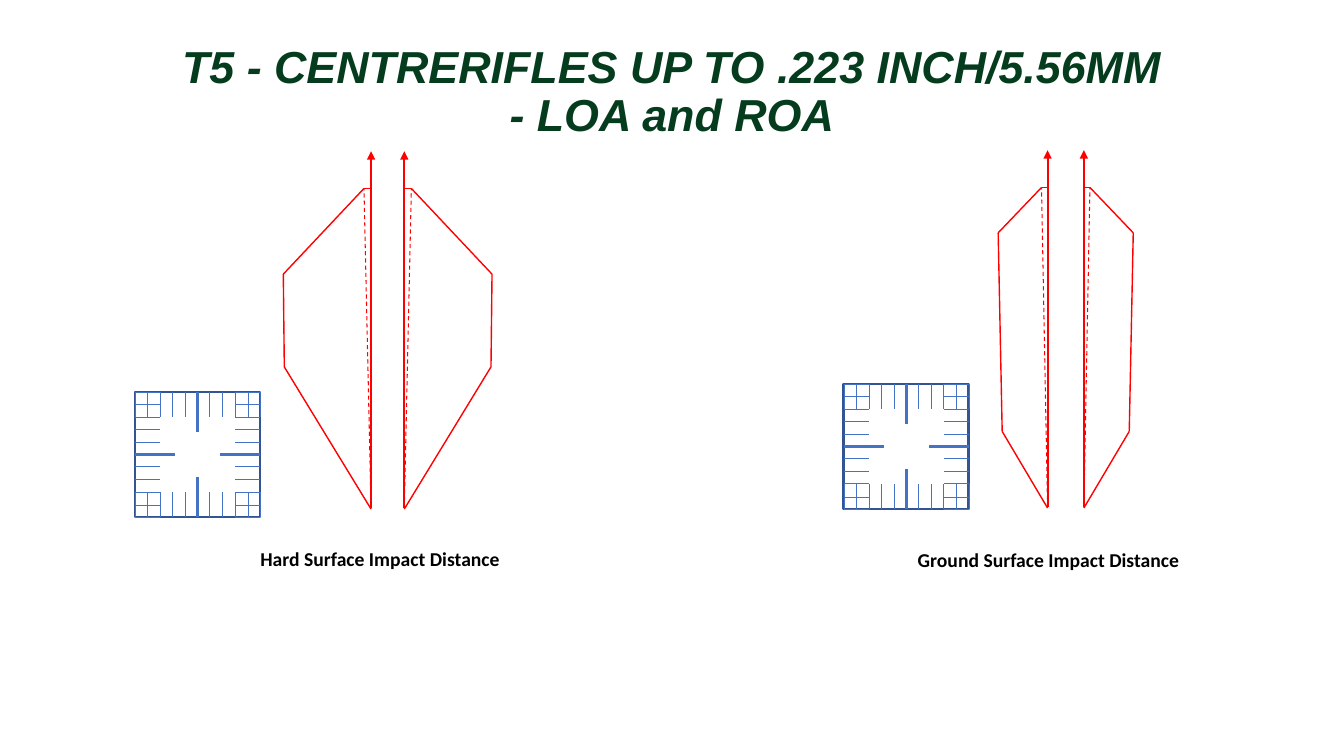
from dataclasses import dataclass

from lxml import etree
from pptx import Presentation
from pptx.dml import color
from pptx.enum import dml, shapes, text
from pptx.oxml import ns
from pptx import util as u

PX = 9144
TICK_COUNT = 10


@dataclass(frozen=True)
class Theme:
    title_color: color.RGBColor = color.RGBColor.from_string("053C1E")
    caption_color: color.RGBColor = color.RGBColor.from_string("000000")
    arc_color: color.RGBColor = color.RGBColor.from_string("FF0000")
    frame_color: color.RGBColor = color.RGBColor.from_string("325491")
    tick_color: color.RGBColor = color.RGBColor.from_string("4472C4")
    title_size: int = 32
    caption_size: int = 14
    title_font: str = "Arial"
    caption_font: str = "Calibri"


@dataclass(frozen=True)
class Diagram:
    caption: str
    caption_at: tuple
    grid_at: tuple
    axes: tuple
    top: int
    lean: int
    shoulder: tuple
    hip: tuple


THEME = Theme()
GRID_SIDE = 124
DIAGRAMS = (
    Diagram("Hard Surface Impact Distance", (188, 538, 378, 34),
            (134, 389), (368, 401), 150, 7, (87, 272), (86, 364)),
    Diagram("Ground Surface Impact Distance", (851, 539, 378, 57),
            (837, 381), (1039, 1075), 149, 6, (49, 231), (45, 428)),
)


def px(*lengths):
    return [u.Emu(round(length) * PX) for length in lengths]


def style_paragraph(para, size, font_name, font_color, italic=False):
    para.alignment = text.PP_ALIGN.CENTER
    para.font.size = u.Pt(size)
    para.font.name = font_name
    para.font.bold = True
    para.font.italic = italic
    para.font.color.rgb = font_color


def add_title(page, lines):
    title = page.shapes.title
    title.left, title.top, title.width, title.height = px(0, 43, 1333, 98)
    frame = title.text_frame
    frame.text = "\n".join(lines)
    frame.word_wrap = True
    frame.auto_size = text.MSO_AUTO_SIZE.NONE
    frame.vertical_anchor = text.MSO_ANCHOR.MIDDLE
    for para in frame.paragraphs:
        style_paragraph(para, THEME.title_size, THEME.title_font,
                        THEME.title_color, italic=True)
        para.line_spacing = 0.9


def add_caption(page, caption, place):
    box = page.shapes.add_textbox(*px(*place))
    box.text_frame.word_wrap = True
    para = box.text_frame.paragraphs[0]
    para.text = caption
    style_paragraph(para, THEME.caption_size, THEME.caption_font,
                    THEME.caption_color)


def add_line(group, start, end, line_color, width, dash=None, arrow=False):
    line = group.shapes.add_connector(
        shapes.MSO_CONNECTOR.STRAIGHT, *px(*start, *end))
    line.line.color.rgb = line_color
    line.line.width = u.Pt(width)
    if dash:
        line.line.dash_style = dash
    if arrow:
        etree.SubElement(line.line._get_or_add_ln(), ns.qn("a:tailEnd"),
                         type="triangle")
    etree.SubElement(line._element.spPr, ns.qn("a:effectLst"))
    return line


def add_grid(group, left, top):
    frame = group.shapes.add_shape(
        shapes.MSO_SHAPE.RECTANGLE, *px(left, top, GRID_SIDE, GRID_SIDE))
    frame.shadow.inherit = False
    frame.fill.background()
    frame.line.color.rgb = THEME.frame_color
    frame.line.width = u.Pt(2)
    right, bottom = left + GRID_SIDE, top + GRID_SIDE
    for index in range(TICK_COUNT + 1):
        offset = GRID_SIDE * index / TICK_COUNT
        middle = index == TICK_COUNT // 2
        length, width = (40, 1.75) if middle else (25, 0.5)
        x, y = left + offset, top + offset
        ticks = (
            ((x, top), (x, top + length)),
            ((left, y), (left + length, y)),
            ((x, bottom), (x, bottom - length)),
            ((right, y), (right - length, y)),
        )
        for site, (start, end) in enumerate(ticks):
            tick = add_line(group, start, end, THEME.tick_color, width)
            if middle:
                tick.begin_connect(frame, site)


def add_arc(group, axis, side, diagram):
    def point(reach, y):
        return axis + side * reach, y

    crown, base = diagram.top + 37, diagram.top + 354
    foot = point(0, base)
    peak = point(diagram.lean, crown)
    shoulder, hip = point(*diagram.shoulder), point(*diagram.hip)
    add_line(group, foot, point(0, diagram.top), THEME.arc_color, 1.5,
             arrow=True)
    add_line(group, foot, peak, THEME.arc_color, 0.75,
             dash=dml.MSO_LINE.DASH)
    outline = (point(0, base + 1), hip, shoulder, peak, point(0, crown))
    for start, end in zip(outline, outline[1:]):
        add_line(group, start, end, THEME.arc_color, 1)


def add_diagram(page, diagram):
    add_caption(page, diagram.caption, diagram.caption_at)
    group = page.shapes.add_group_shape()
    add_grid(group, *diagram.grid_at)
    for axis, side in zip(diagram.axes, (-1, 1)):
        add_arc(group, axis, side, diagram)


def main():
    deck = Presentation()
    deck.slide_width, deck.slide_height = px(1333, 750)
    page = deck.slides.add_slide(deck.slide_layouts[5])
    add_title(page, ("T5 - CENTRERIFLES UP TO .223 INCH/5.56MM",
                     "- LOA and ROA"))
    for diagram in DIAGRAMS:
        add_diagram(page, diagram)
    deck.save("out.pptx")


if __name__ == "__main__":
    main()
